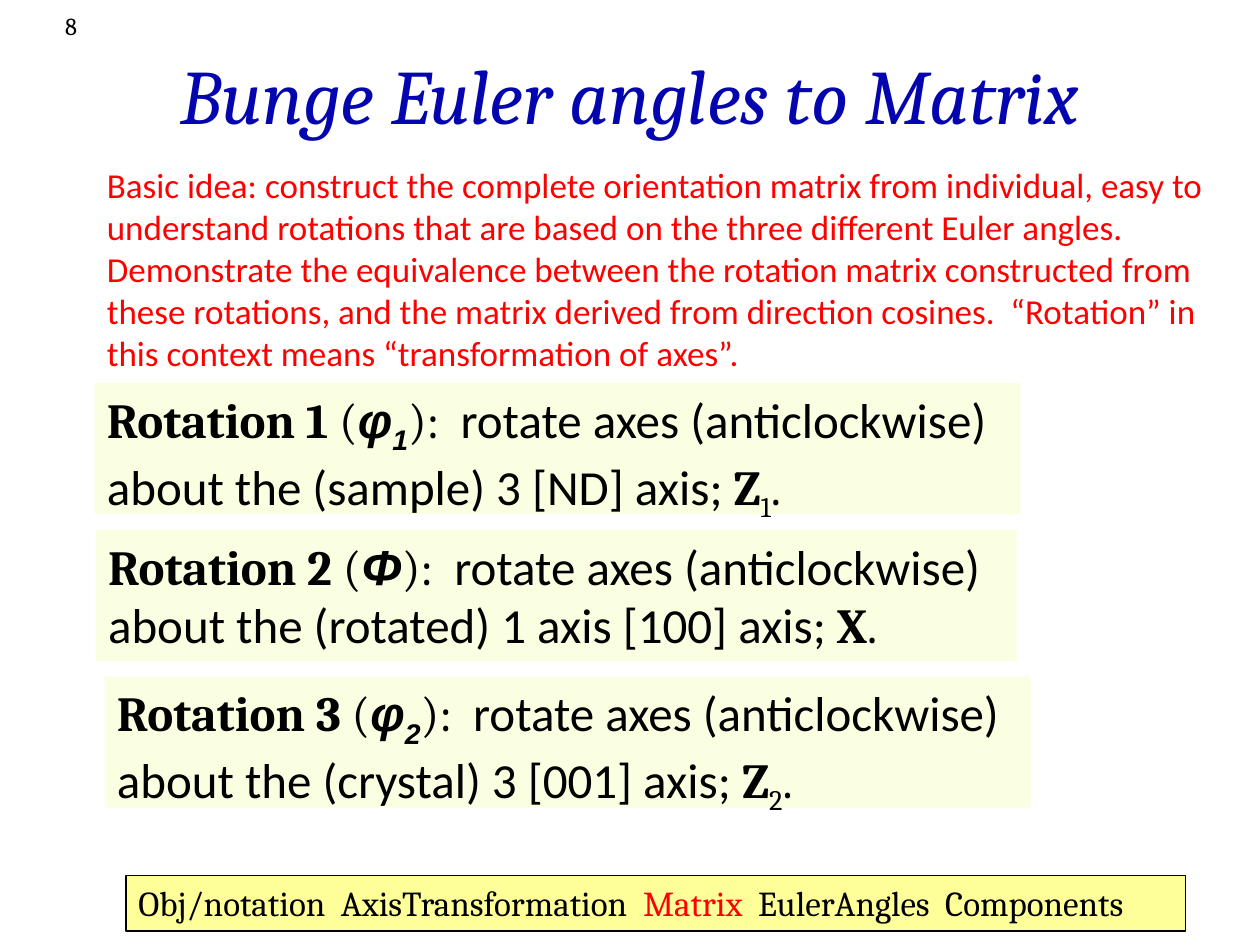
import pptx
import pptx.dml.color
import pptx.enum.shapes
import pptx.enum.text
import pptx.util

Inches = pptx.util.Inches
ALIGN = pptx.enum.text.PP_ALIGN
ANCHOR = pptx.enum.text.MSO_ANCHOR

BLACK, RED, BLUE = "000000", "FF0000", "0405AE"
PALE, YELLOW = "FAFFE2", "FFFF99"

TITLE = "Bunge Euler angles to Matrix"
PAGE_NUMBER = "8"
IDEA = (
    "Basic idea: construct the complete orientation matrix from individual, easy to "
    "understand rotations that are based on the three different Euler angles.  "
    "Demonstrate the equivalence between the rotation matrix constructed from these "
    "rotations, and the matrix derived from direction cosines.  “Rotation” in this "
    "context means “transformation of axes”."
)
ROTATIONS = [
    {"name": "Rotation 1 ", "angle": "φ", "index": "1", "left": 0.75, "width": 7.35,
     "about": "about the (sample) 3 [ND] axis; ", "axis": "Z"},
    {"name": "Rotation 2 ", "angle": "Φ", "index": "", "left": 0.76, "width": 7.31,
     "about": "about the (rotated) 1 axis [100] axis; ", "axis": "X"},
    {"name": "Rotation 3 ", "angle": "φ", "index": "2", "left": 0.83, "width": 7.35,
     "about": "about the (crystal) 3 [001] axis; ", "axis": "Z"},
]
TOPICS = [
    ("Obj/notation  AxisTransformation  ", BLACK),
    ("Matrix  ", RED),
    ("EulerAngles  Components", BLACK),
]
ROTATION_TOP, ROTATION_STEP, ROTATION_HEIGHT = 3.04, 1.165, 1.04


def color(hex_text):
    return pptx.dml.color.RGBColor.from_string(hex_text)


def add_run(paragraph, text, size, font="Cambria", ink=BLACK,
            bold=False, italic=False, subscript=False):
    run = paragraph.add_run()
    run.text = text
    run.font.size = pptx.util.Pt(size)
    run.font.name = font
    run.font.bold = bold
    run.font.italic = italic
    run.font.color.rgb = color(ink)
    if subscript:
        run.font._element.set("baseline", "-25000")


def add_text_box(slide, left, top, width, height):
    shape = slide.shapes.add_textbox(
        Inches(left), Inches(top), Inches(width), Inches(height))
    shape.text_frame.word_wrap = True
    return shape.text_frame


def add_panel(slide, left, top, width, height, fill, outline=None):
    shape = slide.shapes.add_shape(
        pptx.enum.shapes.MSO_SHAPE.RECTANGLE,
        Inches(left), Inches(top), Inches(width), Inches(height))
    shape.shadow.inherit = False
    shape.fill.solid()
    shape.fill.fore_color.rgb = color(fill)
    if outline:
        shape.line.color.rgb = color(outline)
        shape.line.width = pptx.util.Pt(0.75)
    else:
        shape.line.fill.background()
    frame = shape.text_frame
    frame.word_wrap = True
    frame.vertical_anchor = ANCHOR.TOP
    frame.paragraphs[0].alignment = ALIGN.LEFT
    return frame


def add_rotation(slide, rotation, top):
    frame = add_panel(slide, rotation["left"], top, rotation["width"],
                      ROTATION_HEIGHT, PALE)
    first = frame.paragraphs[0]
    second = frame.add_paragraph()
    second.alignment = ALIGN.LEFT

    add_run(first, rotation["name"], 28, bold=True)
    add_run(first, "(", 28)
    add_run(first, rotation["angle"], 28, "Arial", bold=True, italic=True)
    if rotation["index"]:
        add_run(first, rotation["index"], 28, "Arial", bold=True, italic=True,
                subscript=True)
    add_run(first, "):  ", 28)
    add_run(first, "rotate axes (anticlockwise)", 28, "Calibri")

    add_run(second, rotation["about"], 28, "Calibri")
    add_run(second, rotation["axis"], 28, bold=True)
    if rotation["index"]:
        add_run(second, rotation["index"], 28, subscript=True)
    add_run(second, ".", 28)


def main():
    presentation = pptx.Presentation()
    presentation.slide_width, presentation.slide_height = Inches(10), Inches(7.5)
    slide = presentation.slides.add_slide(presentation.slide_layouts[5])

    title = slide.shapes.title
    title.left, title.top = Inches(0.75), Inches(0.33)
    title.width, title.height = Inches(8.5), Inches(0.83)
    title.text_frame.vertical_anchor = ANCHOR.MIDDLE
    title.text_frame.paragraphs[0].alignment = ALIGN.CENTER
    add_run(title.text_frame.paragraphs[0], TITLE, 44, ink=BLUE, italic=True)

    number = add_text_box(slide, 0.04, 0.04, 0.67, 0.33).paragraphs[0]
    number.alignment = ALIGN.RIGHT
    add_run(number, PAGE_NUMBER, 14)

    idea = add_text_box(slide, 0.75, 1.25, 9, 1.33).paragraphs[0]
    add_run(idea, IDEA, 20, "Calibri", RED)

    for position, rotation in enumerate(ROTATIONS):
        add_rotation(slide, rotation, ROTATION_TOP + position * ROTATION_STEP)

    topics = add_panel(slide, 1, 6.95, 8.41, 0.44, YELLOW, BLACK).paragraphs[0]
    for text, ink in TOPICS:
        add_run(topics, text, 20, ink=ink)

    presentation.save("out.pptx")


if __name__ == "__main__":
    main()
